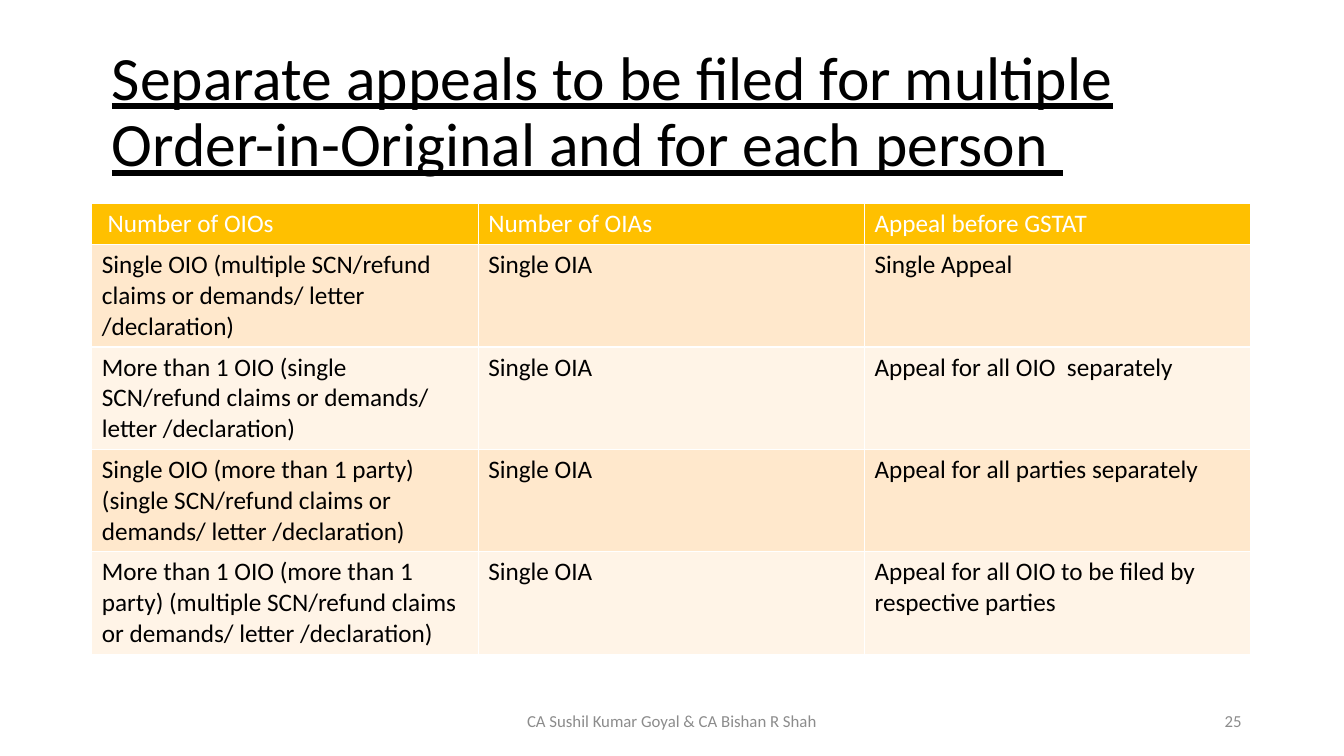
from dataclasses import dataclass

import pptx
import pptx.dml.color
import pptx.enum.text
import pptx.oxml
import pptx.oxml.ns
import pptx.util

Pt = pptx.util.Pt
RGB = pptx.dml.color.RGBColor.from_string
ALIGN = pptx.enum.text.PP_ALIGN
MIDDLE = pptx.enum.text.MSO_ANCHOR.MIDDLE


@dataclass(frozen=True)
class Theme:
    font: str = "Calibri"
    ink: str = "000000"
    white: str = "FFFFFF"
    muted: str = "8C8C8C"
    header: str = "FFC000"
    bands: tuple[str, ...] = ("FFE8CC", "FFF4E7")
    title_size: float = 44
    table_size: float = 18
    footer_size: float = 12


@dataclass(frozen=True)
class FooterText:
    text: str
    left: float
    width: float
    align: ALIGN


THEME = Theme()

# Content
TITLE = "Separate appeals to be filed for multiple Order-in-Original and for each person "
ROWS = [
    (" Number of OIOs", "Number of OIAs", "Appeal before GSTAT"),
    ("Single OIO (multiple SCN/refund claims or demands/ letter /declaration)",
     "Single OIA", "Single Appeal"),
    ("More than 1 OIO (single SCN/refund claims or demands/ letter /declaration)",
     "Single OIA", "Appeal for all OIO  separately"),
    ("Single OIO (more than 1 party) (single SCN/refund claims or demands/ letter /declaration)",
     "Single OIA", "Appeal for all parties separately"),
    ("More than 1 OIO (more than 1 party) (multiple SCN/refund claims or demands/ letter /declaration)",
     "Single OIA", "Appeal for all OIO to be filed by respective parties"),
]
FOOTERS = [
    FooterText("CA Sushil Kumar Goyal & CA Bishan R Shah", 318, 324, ALIGN.CENTER),
    FooterText("25", 678, 216, ALIGN.RIGHT),
]
HEADER_HEIGHT, BODY_HEIGHT = 29.2, 73.1


def write(tf, text: str, size: float, color: str, **extra) -> None:
    """Put one formatted run in the first paragraph."""
    r = tf.paragraphs[0].add_run()
    r.text = text
    for name, value in {"name": THEME.font, "size": Pt(size), **extra}.items():
        setattr(r.font, name, value)
    r.font.color.rgb = RGB(color)


def add_borders(cell, color: str, width: float) -> None:
    tc_pr = cell._tc.get_or_add_tcPr()
    for side in "LRTB":
        tc_pr.append(pptx.oxml.parse_xml(
            f'<a:ln{side} {pptx.oxml.ns.nsdecls("a")} w="{Pt(width)}">'
            f'<a:solidFill><a:srgbClr val="{color}"/></a:solidFill></a:ln{side}>'))


def add_title(s) -> None:
    sp = s.shapes.title
    box = {"left": 72.72, "top": 28.8, "width": 820.8, "height": 104.4}
    for name, value in box.items():
        setattr(sp, name, Pt(value))
    tf = sp.text_frame
    frame = {"word_wrap": True, "vertical_anchor": MIDDLE,
             "auto_size": pptx.enum.text.MSO_AUTO_SIZE.NONE}
    for name, value in frame.items():
        setattr(tf, name, value)
    p = tf.paragraphs[0]
    p.alignment, p.line_spacing = ALIGN.LEFT, 0.9
    write(tf, TITLE, THEME.title_size, THEME.ink, underline=True)


def add_appeals_table(s) -> None:
    height = HEADER_HEIGHT + BODY_HEIGHT * (len(ROWS) - 1)
    table = s.shapes.add_table(len(ROWS), len(ROWS[0]), Pt(65.6), Pt(145.6),
                               Pt(828), Pt(height)).table
    for i, row in enumerate(ROWS):
        is_header = i == 0
        table.rows[i].height = Pt(HEADER_HEIGHT if is_header else BODY_HEIGHT)
        fill = THEME.header if is_header else THEME.bands[(i - 1) % 2]
        color = THEME.white if is_header else THEME.ink
        for j, text in enumerate(row):
            cell = table.cell(i, j)
            add_borders(cell, THEME.white, 1)
            cell.fill.solid()
            cell.fill.fore_color.rgb = RGB(fill)
            write(cell.text_frame, text, THEME.table_size, color, bold=False)


def add_footer(s, item: FooterText) -> None:
    sp = s.shapes.add_textbox(Pt(item.left), Pt(500.5), Pt(item.width), Pt(28.8))
    tf = sp.text_frame
    tf.word_wrap, tf.vertical_anchor = True, MIDDLE
    tf.paragraphs[0].alignment = item.align
    write(tf, item.text, THEME.footer_size, THEME.muted)


def main() -> None:
    prs = pptx.Presentation()
    prs.slide_width, prs.slide_height = Pt(960), Pt(540)
    s = prs.slides.add_slide(prs.slide_layouts[5])
    s.background.fill.solid()
    s.background.fill.fore_color.rgb = RGB(THEME.white)

    add_title(s)
    add_appeals_table(s)
    for item in FOOTERS:
        add_footer(s, item)

    prs.save("out.pptx")


if __name__ == "__main__":
    main()
